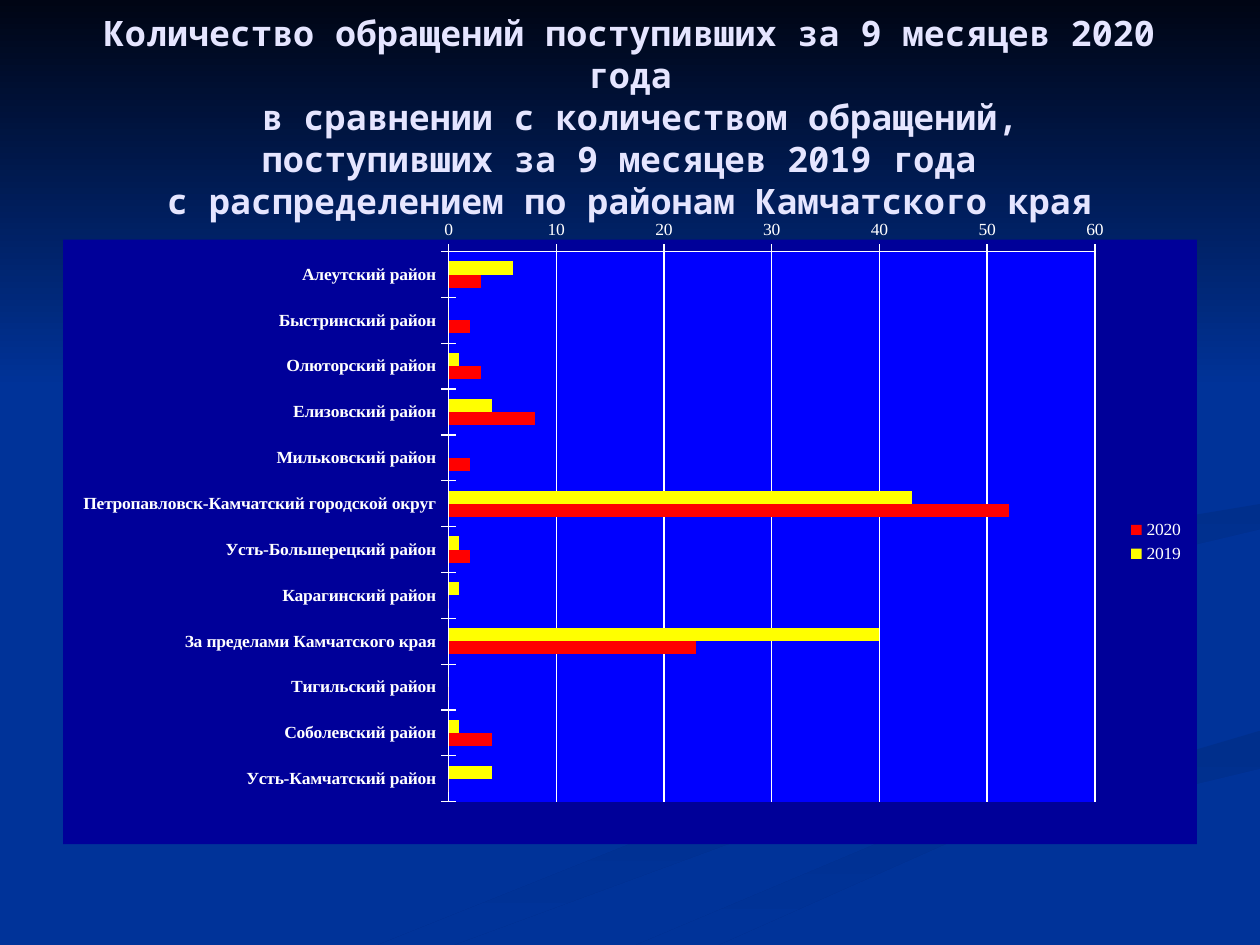
"""Builds a slide comparing regional appeals for two years in a bar chart."""
from dataclasses import dataclass

from lxml import etree
from pptx import Presentation, util as u
from pptx.chart.data import CategoryChartData
from pptx.dml.color import RGBColor
from pptx.enum import chart as ch, text
from pptx.oxml import ns


@dataclass(frozen=True)
class Theme:
    """Colours, fonts and type sizes of the slide."""
    back: str = "003399"
    night: str = "000514"
    shade: str = "002F8C"
    title: str = "E5E5FF"
    light: str = "FFFFFF"
    panel: str = "000099"
    plot: str = "0000FF"
    old: str = "FFFF00"
    new: str = "FF0000"
    title_font: str = "Noto Sans Mono"
    chart_font: str = "Times New Roman"
    title_size: int = 20
    chart_size: int = 10


TITLE = ["Количество обращений поступивших за 9 месяцев 2020 года",
         " в сравнении с количеством обращений,",
         "поступивших за 9 месяцев 2019 года ",
         "с распределением по районам Камчатского края"]

APPEALS = {
    "Алеутский район": (6, 3),
    "Быстринский район": (0, 2),
    "Олюторский район": (1, 3),
    "Елизовский район": (4, 8),
    "Мильковский район": (0, 2),
    "Петропавловск-Камчатский городской округ": (43, 52),
    "Усть-Большерецкий район": (1, 2),
    "Карагинский район": (1, 0),
    "За пределами Камчатского края": (40, 23),
    "Тигильский район": (0, 0),
    "Соболевский район": (1, 4),
    "Усть-Камчатский район": (4, 0),
}

LOWER_SWIRL = [(6, 15), (10, 13.4), (15.6, 11.7), (15.6, 11), (16, 11.6), (14, 12.5), (7.2, 15)]
RIGHT_SWIRL = [(10.1, 15), (13.9, 13.4), (20, 11.6), (20, 12.2), (15, 13.4), (11.4, 15)]
UPPER_SWIRL = [(15.6, 9.2), (17, 8.5), (20, 8), (20, 8.4), (16.2, 9.3), (16.5, 9.9)]
TOP_BAND = [(0, 0), (20, 0), (20, 6.16), (0, 6.16)]


def assign(target, **values):
    """Sets each given format value on the target."""
    for name, value in values.items():
        setattr(target, name, value)


class Deck:
    """Holds the theme and the slide, placed on a grid of 20 columns by 15 rows."""

    def __init__(self, theme):
        self.theme = theme
        self.prs = Presentation()
        assign(self.prs, slide_width=u.Inches(10), slide_height=u.Inches(7.5))
        self.cell = self.prs.slide_width / 20
        self.s = self.prs.slides.add_slide(self.prs.slide_layouts[5])
        self.paint(self.s.background.fill, theme.back)

    def box(self, *cells):
        """Turns grid cells into lengths."""
        return [u.Emu(round(c * self.cell)) for c in cells]

    def paint(self, fill, color):
        """Fills with one plain colour."""
        fill.solid()
        fill.fore_color.rgb = RGBColor.from_string(color)

    def font(self, font, color, **values):
        """Formats a font."""
        assign(font, **values)
        font.color.rgb = RGBColor.from_string(color)

    def outline(self, points, start):
        """Draws a closed outline that fades downwards into the background."""
        first, *rest = [self.box(*point) for point in points]
        builder = self.s.shapes.build_freeform(*first)
        builder.add_line_segments(rest, close=True)
        sp = builder.convert_to_shape()
        sp.shadow.inherit = False
        sp.line.fill.background()
        sp.fill.gradient()
        sp.fill.gradient_angle = 270
        for stop, color in zip(sp.fill.gradient_stops, (start, self.theme.back)):
            stop.color.rgb = RGBColor.from_string(color)

    def title(self, lines, *cells):
        """Places and fills the title in front of the backdrop."""
        t, sp = self.theme, self.s.shapes.title
        sp.element.getparent().append(sp.element)
        assign(sp, **dict(zip(("left", "top", "width", "height"), self.box(*cells))))
        tf = sp.text_frame
        assign(tf, word_wrap=True, auto_size=text.MSO_AUTO_SIZE.NONE,
               vertical_anchor=text.MSO_ANCHOR.MIDDLE)
        p = tf.paragraphs[0]
        p.alignment = text.PP_ALIGN.CENTER
        for i, line in enumerate(lines):
            if i:
                p.add_line_break()
            r = p.add_run()
            r.text = line
            self.font(r.font, t.title, name=t.title_font, size=u.Pt(t.title_size), bold=True)

    def bars(self, rows, series, plot, *cells):
        """Adds a clustered bar chart with its plot area at given shares."""
        t, data = self.theme, CategoryChartData()
        data.categories = list(rows)
        for (name, _), values in zip(series, zip(*rows.values())):
            data.add_series(name, values)
        chart = self.s.shapes.add_chart(ch.XL_CHART_TYPE.BAR_CLUSTERED, *self.box(*cells), data).chart
        assign(chart, has_title=False, has_legend=True)
        self.font(chart.font, t.back, name=t.chart_font, size=u.Pt(t.chart_size))
        assign(chart.legend, position=ch.XL_LEGEND_POSITION.RIGHT, include_in_layout=False)
        self.font(chart.legend.font, t.light)
        bars = chart.plots[0]
        assign(bars, gap_width=150, overlap=0, vary_by_categories=False)
        for item, (_, color) in zip(bars.series, series):
            self.paint(item.format.fill, color)
        cat, val = chart.category_axis, chart.value_axis
        assign(cat, reverse_order=True, crosses=ch.XL_AXIS_CROSSES.MAXIMUM)
        assign(val, minimum_scale=0, maximum_scale=60, major_unit=10, has_major_gridlines=True)
        for axis, bold in ((cat, True), (val, False)):
            axis.major_tick_mark = ch.XL_TICK_MARK.CROSS
            self.font(axis.tick_labels.font, t.light, bold=bold)
            self.paint(axis.format.line.fill, t.light)
        self.paint(val.major_gridlines.format.line.fill, t.light)
        self.panel(chart, plot)

    def panel(self, chart, plot):
        """Colours the chart and plot areas and fixes the plot's place."""
        t, root = self.theme, chart.element
        area = root.find(".//" + ns.qn("c:plotArea"))
        for old in area.findall(ns.qn("c:layout")):
            area.remove(old)
        layout = etree.Element(ns.qn("c:layout"))
        manual = etree.SubElement(layout, ns.qn("c:manualLayout"))
        values = dict(layoutTarget="inner", xMode="edge", yMode="edge", **plot)
        for name, value in values.items():
            etree.SubElement(manual, ns.qn("c:" + name), val=str(value))
        area.insert(0, layout)
        area.append(self.area_fill(t.plot))
        root.find(ns.qn("c:chart")).addnext(self.area_fill(t.panel))

    def area_fill(self, color):
        """Makes chart area properties with a plain fill and no line."""
        props = etree.Element(ns.qn("c:spPr"))
        solid = etree.SubElement(props, ns.qn("a:solidFill"))
        etree.SubElement(solid, ns.qn("a:srgbClr"), val=color)
        etree.SubElement(etree.SubElement(props, ns.qn("a:ln")), ns.qn("a:noFill"))
        return props


def main():
    """Builds and saves the slide."""
    t = Theme()
    deck = Deck(t)
    for swirl in (LOWER_SWIRL, RIGHT_SWIRL, UPPER_SWIRL):
        deck.outline(swirl, t.shade)
    deck.outline(TOP_BAND, t.night)
    deck.title(TITLE, 1, 0.6, 18, 2.5)
    deck.bars(APPEALS, [("2019", t.old), ("2020", t.new)],
              dict(x=0.34, y=0.02, w=0.57, h=0.91), 1, 3.5, 18, 9.9)
    deck.prs.save("out.pptx")


if __name__ == "__main__":
    main()
